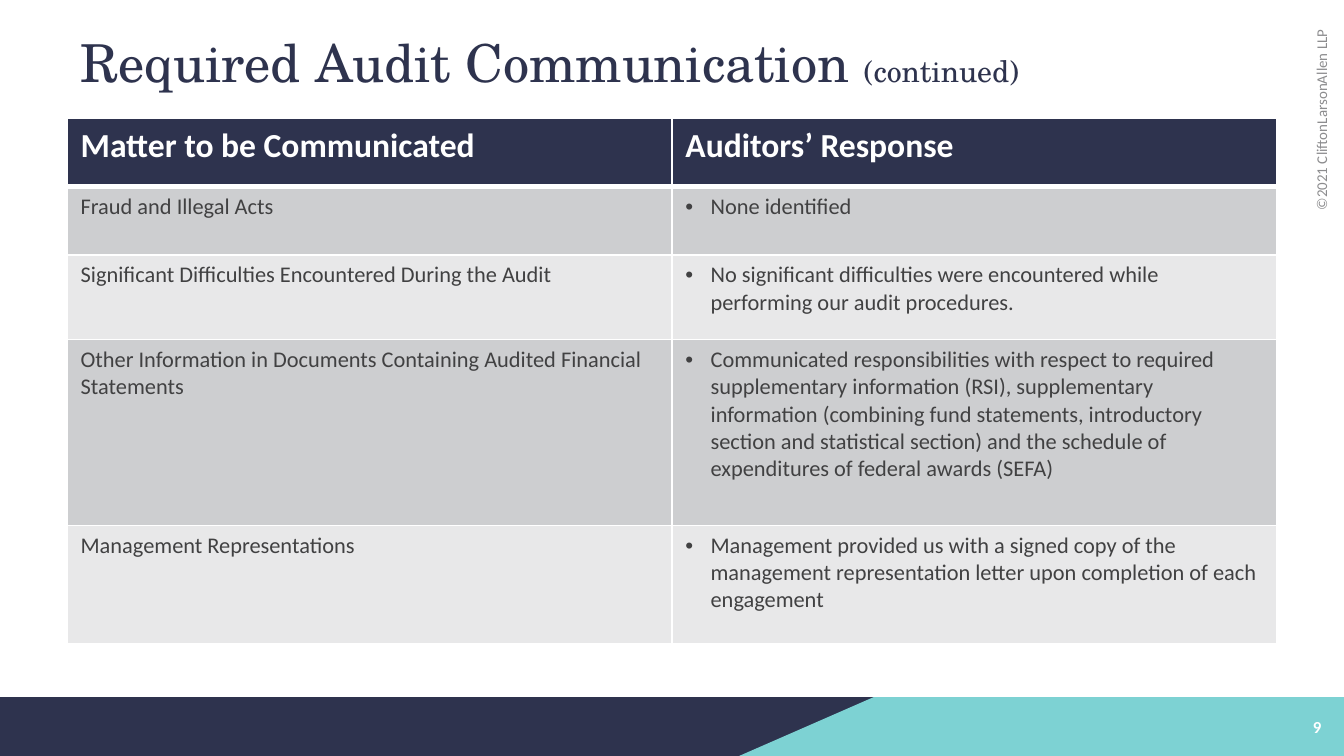
from pptx import Presentation
from pptx.util import Pt
from pptx.dml.color import RGBColor
from pptx.enum.shapes import MSO_SHAPE as Preset
from pptx.enum.text import MSO_ANCHOR as Anchor, PP_ALIGN as Align
from pptx.oxml import parse_xml
from pptx.oxml.ns import nsdecls

NAVY, TEAL, WHITE, GRAY = "2E334E", "7DD2D3", "FFFFFF", "414142"


def color(value):
    return RGBColor.from_string(value)


def add_run(paragraph, text, size, value, name="Calibri", bold=False):
    run = paragraph.add_run()
    run.text = text
    run.font.color.rgb = color(value)
    formats = {"size": Pt(size), "name": name, "bold": bold}
    for attribute, setting in formats.items():
        setattr(run.font, attribute, setting)


presentation = Presentation()
presentation.slide_width = Pt(720)
presentation.slide_height = Pt(405)
slide = presentation.slides.add_slide(presentation.slide_layouts[6])

band = slide.shapes.add_shape(Preset.RECTANGLE, 0, Pt(373.5), Pt(720), Pt(31.5))
builder = slide.shapes.build_freeform(Pt(468), Pt(373.5))
builder.add_line_segments(
    [(Pt(x), Pt(y)) for x, y in [(720, 373.5), (720, 405), (396, 405)]], close=True
)
wedge = builder.convert_to_shape()
for shape, value in [(band, NAVY), (wedge, TEAL)]:
    shape.shadow.inherit = False
    shape.fill.solid()
    shape.fill.fore_color.rgb = color(value)
    shape.line.fill.background()

text_boxes = [
    ((638, 66.2, 139.6, 24.5), 270, Align.RIGHT,
     [("©2021 CliftonLarsonAllen LLP", 8, "8C8C8E")]),
    ((36, 5.8, 648, 54), 0, Align.LEFT,
     [("Required Audit Communication ", 28, NAVY, "TeX Gyre Schola"),
      ("(continued)", 16, NAVY, "TeX Gyre Schola")]),
    ((684, 375.8, 31, 27.4), 0, Align.RIGHT, [("9", 9, WHITE, "Calibri", True)]),
]
for place, rotation, alignment, runs in text_boxes:
    shape = slide.shapes.add_textbox(*map(Pt, place))
    shape.rotation = rotation
    formats = {"word_wrap": True, "vertical_anchor": Anchor.MIDDLE}
    for attribute, setting in formats.items():
        setattr(shape.text_frame, attribute, setting)
    paragraph = shape.text_frame.paragraphs[0]
    paragraph.alignment = alignment
    for run in runs:
        add_run(paragraph, *run)

rows = [
    (36.5, "Matter to be Communicated", "Auditors’ Response"),
    (36.5, "Fraud and Illegal Acts", "None identified"),
    (45.5, "Significant Difficulties Encountered During the Audit",
     "No significant difficulties were encountered while performing our audit procedures."),
    (99.5, "Other Information in Documents Containing Audited Financial Statements",
     "Communicated responsibilities with respect to required supplementary information (RSI), "
     "supplementary information (combining fund statements, introductory section and "
     "statistical section) and the schedule of expenditures of federal awards (SEFA)"),
    (63.5, "Management Representations",
     "Management provided us with a signed copy of the management representation letter "
     "upon completion of each engagement"),
]
table = slide.shapes.add_table(
    len(rows), 2, Pt(36), Pt(63.5), Pt(648), Pt(sum(row[0] for row in rows))
).table
table.horz_banding = False
for column in table.columns:
    column.width = Pt(324)

for row_index, (height, *texts) in enumerate(rows):
    table.rows[row_index].height = Pt(height)
    header = row_index == 0
    fill = NAVY if header else ("E8E8E9", "CDCED0")[row_index % 2]
    widths = {"L": 1, "R": 1, "T": 3 if row_index == 1 else 1, "B": 3 if header else 1}
    for column_index, text in enumerate(texts):
        cell = table.cell(row_index, column_index)
        properties = cell._tc.get_or_add_tcPr()
        for side, width in widths.items():
            properties.append(parse_xml(
                f'<a:ln{side} {nsdecls("a")} w="{Pt(width)}"><a:solidFill>'
                f'<a:srgbClr val="{WHITE}"/></a:solidFill></a:ln{side}>'
            ))
        cell.fill.solid()
        cell.fill.fore_color.rgb = color(fill)
        paragraph = cell.text_frame.paragraphs[0]
        if column_index == 1 and not header:
            bullet = paragraph._p.get_or_add_pPr()
            bullet.set("marL", str(Pt(13.5)))
            bullet.set("indent", str(-Pt(13.5)))
            bullet.append(parse_xml(f'<a:buFont {nsdecls("a")} typeface="Arial"/>'))
            bullet.append(parse_xml(f'<a:buChar {nsdecls("a")} char="•"/>'))
        add_run(paragraph, text, 18 if header else 12, WHITE if header else GRAY, bold=header)

presentation.save("out.pptx")
